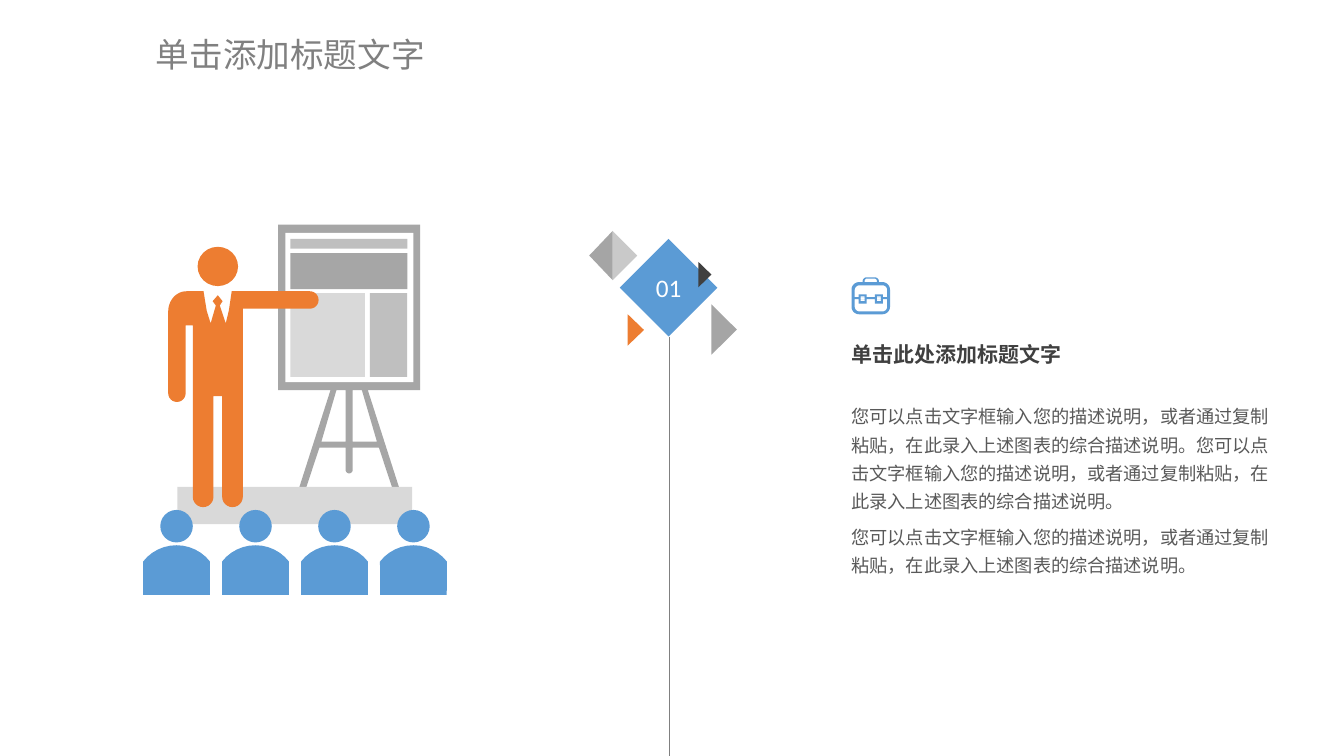
import dataclasses
import math
import typing

import lxml.etree
import pptx
import pptx.dml.color
import pptx.enum.shapes
import pptx.enum.text
import pptx.oxml.ns
import pptx.slide
import pptx.text.text
import pptx.util

Cm = pptx.util.Cm
Pt = pptx.util.Pt
PRESET = pptx.enum.shapes.MSO_SHAPE
Point = tuple[float, float]
Contour = list[Point]


@dataclasses.dataclass(frozen=True)
class Theme:
    blue: str = "5B9BD5"
    orange: str = "ED7D31"
    white: str = "FFFFFF"
    ink: str = "404040"
    body: str = "595959"
    title: str = "808080"
    steel: str = "A6A6A6"
    facet: str = "A5A5A5"
    facet_light: str = "C9C9C9"
    silver: str = "BFBFBF"
    pale: str = "D9D9D9"
    latin: str = "Calibri"
    cjk: str = "Noto Sans CJK SC"
    title_size: int = 24
    number_size: int = 18
    heading_size: int = 15
    body_size: int = 13


THEME = Theme()


class Block(typing.NamedTuple):
    preset: PRESET
    left: float
    top: float
    width: float
    height: float
    color: str


class Triangle(typing.NamedTuple):
    """A vertical edge with its apex to the right, or to the left if reach is negative."""
    left: float
    top: float
    reach: float
    height: float
    color: str


class Passage(typing.NamedTuple):
    text: str
    font: str
    size: int
    color: str
    bold: bool = False
    layout: dict[str, typing.Any] = {}


BOARD = [
    Block(PRESET.RECTANGLE, 7.19, 5.87, 3.23, 3.76, THEME.white),
    Block(PRESET.RECTANGLE, 7.32, 6.02, 2.95, 0.25, THEME.silver),
    Block(PRESET.RECTANGLE, 7.32, 6.38, 2.95, 0.91, THEME.steel),
    Block(PRESET.RECTANGLE, 7.32, 7.39, 1.88, 2.11, THEME.pale),
    Block(PRESET.RECTANGLE, 9.32, 7.39, 0.94, 2.11, THEME.silver),
]
PLATFORM = Block(PRESET.RECTANGLE, 4.47, 12.27, 5.92, 0.94, THEME.pale)
PRESENTER_HEAD = Block(PRESET.OVAL, 4.98, 6.22, 1.02, 0.99, THEME.orange)
NUMBER_DIAMOND = Block(PRESET.DIAMOND, 15.62, 6.02, 2.46, 2.46, THEME.blue)
TRIANGLES = [
    Triangle(15.82, 7.92, 0.41, 0.79, THEME.orange),
    Triangle(17.6, 6.6, 0.33, 0.64, THEME.ink),
    Triangle(15.44, 5.82, 0.62, 1.24, THEME.facet_light),
    Triangle(17.93, 7.67, 0.64, 1.27, THEME.facet),
    Triangle(15.44, 5.82, -0.59, 1.24, THEME.facet),
]

BODY_LAYOUT = {"line_spacing": 1.3, "space_after": Pt(5)}
TITLE = Passage("单击添加标题文字", THEME.cjk, THEME.title_size, THEME.title)
NUMBER = Passage("01", THEME.latin, THEME.number_size, THEME.white,
                 layout={"alignment": pptx.enum.text.PP_ALIGN.CENTER})
DESCRIPTION = [
    Passage("单击此处添加标题文字", THEME.latin, THEME.heading_size, THEME.ink, True,
            {"line_spacing": 1.2, "space_before": Pt(4), "space_after": Pt(23)}),
    Passage("您可以点击文字框输入您的描述说明，或者通过复制粘贴，在此录入上述图表的综合描述说明。"
            "您可以点击文字框输入您的描述说明，或者通过复制粘贴，在此录入上述图表的综合描述说明。",
            THEME.cjk, THEME.body_size, THEME.body, layout=BODY_LAYOUT),
    Passage("您可以点击文字框输入您的描述说明，或者通过复制粘贴，在此录入上述图表的综合描述说明。",
            THEME.cjk, THEME.body_size, THEME.body, layout=BODY_LAYOUT),
]
NO_MARGINS = dict.fromkeys(("margin_left", "margin_top", "margin_right", "margin_bottom"), 0)


def rgb(color: str) -> pptx.dml.color.RGBColor:
    return pptx.dml.color.RGBColor.from_string(color)


def arc(x: float, y: float, rx: float, ry: float, start: int, end: int) -> Contour:
    """Points around centre (x, y); degrees run clockwise from the right."""
    steps = 12
    angles = [math.radians(start + (end - start) * i / steps) for i in range(steps + 1)]
    return [(x + rx * math.cos(a), y + ry * math.sin(a)) for a in angles]


def box(left: float, top: float, right: float, bottom: float,
        top_radius: float = 0, bottom_radius: float = 0) -> Contour:
    """A rectangle, with separately rounded top and bottom corners."""
    corners = [(left, top, 1, 1, top_radius), (right, top, -1, 1, top_radius),
               (right, bottom, -1, -1, bottom_radius), (left, bottom, 1, -1, bottom_radius)]
    points: Contour = []
    for turn, (x, y, dx, dy, r) in enumerate(corners):
        start = 180 + 90 * turn
        points += arc(x + dx * r, y + dy * r, r, r, start, start + 90) if r else [(x, y)]
    return points


def paint(shape: typing.Any, color: str) -> None:
    shape.shadow.inherit = False
    shape.fill.solid()
    shape.fill.fore_color.rgb = rgb(color)
    shape.line.fill.background()


def draw_block(slide: pptx.slide.Slide, block: Block) -> typing.Any:
    shape = slide.shapes.add_shape(block.preset, *map(Cm, block[1:5]))
    paint(shape, block.color)
    return shape


def draw_outline(slide: pptx.slide.Slide, color: str, *contours: Contour) -> None:
    """Draw closed contours as one shape; a contour inside another cuts a hole."""
    first, *others = [[(Cm(x), Cm(y)) for x, y in contour] for contour in contours]
    builder = slide.shapes.build_freeform(*first[0])
    builder.add_line_segments(first[1:], close=True)
    for contour in others:
        builder.move_to(*contour[0])
        builder.add_line_segments(contour[1:], close=True)
    paint(builder.convert_to_shape(), color)


def write(frame: pptx.text.text.TextFrame, passages: list[Passage],
          frame_format: dict[str, typing.Any]) -> None:
    for key, value in frame_format.items():
        setattr(frame, key, value)
    for index, passage in enumerate(passages):
        paragraph = frame.add_paragraph() if index else frame.paragraphs[0]
        for key, value in passage.layout.items():
            setattr(paragraph, key, value)
        run = paragraph.add_run()
        run.text = passage.text
        font_format = {"name": passage.font, "size": Pt(passage.size), "bold": passage.bold}
        for key, value in font_format.items():
            setattr(run.font, key, value)
        run.font.color.rgb = rgb(passage.color)
        east_asian = lxml.etree.SubElement(run._r.get_or_add_rPr(), pptx.oxml.ns.qn("a:ea"))
        east_asian.set("typeface", THEME.cjk)


def draw_easel(slide: pptx.slide.Slide) -> None:
    def mirror(points: Contour) -> Contour:
        return [(2 * 8.8 - x, y) for x, y in reversed(points)]

    left_side = [(7.01, 5.66), (7.01, 9.83), (8.33, 9.83), (7.54, 12.29), (7.6, 12.4),
                 (7.7, 12.34), (8.05, 11.28), (8.71, 11.28)]
    post_end = arc(8.8, 11.84, 0.09, 0.09, 180, 0)
    left_gap = [(8.1, 11.13), (8.48, 9.83), (8.71, 9.83), (8.71, 11.13)]
    draw_outline(slide, THEME.steel, left_side + post_end + mirror(left_side),
                 left_gap, mirror(left_gap))
    for block in BOARD:
        draw_block(slide, block)


def draw_presenter(slide: pptx.slide.Slide) -> None:
    draw_block(slide, PRESENTER_HEAD)
    collar = [(5.84, 7.34), (5.77, 7.82), (5.69, 8.15), (5.54, 7.7), (5.61, 7.59), (5.49, 7.44),
              (5.36, 7.59), (5.44, 7.7), (5.31, 8.15), (5.21, 7.83), (5.13, 7.34)]
    shoulder = arc(4.7, 7.85, 0.46, 0.51, 270, 180)
    hand = arc(4.46, 9.91, 0.22, 0.22, 180, 0)
    left_foot = arc(5.12, 12.52, 0.26, 0.26, 180, 0)
    right_foot = arc(5.86, 12.52, 0.26, 0.26, 180, 0)
    pointing_hand = arc(7.81, 7.56, 0.22, 0.22, 90, -90)
    draw_outline(slide, THEME.orange,
                 collar + shoulder + hand + [(4.68, 8.2), (4.86, 8.2)] + left_foot
                 + [(5.38, 9.98), (5.6, 9.98)] + right_foot + [(6.12, 7.78)] + pointing_hand)


def draw_audience(slide: pptx.slide.Slide) -> None:
    for seat in range(4):
        center = 4.45 + 1.99 * seat
        draw_block(slide, Block(PRESET.OVAL, center - 0.41, 12.85, 0.82, 0.82, THEME.blue))
        shoulders = arc(center, 14.81, 1.07, 1.07, 218, 322)
        draw_outline(slide, THEME.blue,
                     shoulders + [(center + 0.84, 14.99), (center - 0.84, 14.99)])


def draw_briefcase(slide: pptx.slide.Slide) -> None:
    clasps = [contour for x in (21.64, 22.05) for contour in (
        box(x, 7.42, x + 0.2, 7.49), box(x, 7.54, x + 0.2, 7.65),
        box(x + 0.05, 7.47, x + 0.15, 7.59))]
    draw_outline(slide, THEME.blue,
                 box(21.46, 7.11, 22.43, 7.92, 0.19, 0.19),
                 box(21.74, 6.99, 22.15, 7.11, 0.1), box(21.79, 7.02, 22.1, 7.11, 0.06),
                 box(21.54, 7.19, 22.36, 7.49, 0.12), box(21.54, 7.54, 22.36, 7.85, 0, 0.12),
                 *clasps)


def draw_timeline(slide: pptx.slide.Slide) -> None:
    line = slide.shapes.add_connector(pptx.enum.shapes.MSO_CONNECTOR.STRAIGHT,
                                      Cm(16.86), Cm(8.48), Cm(16.86), Cm(19.05))
    line.line.color.rgb = rgb(THEME.title)
    line.line.width = Pt(0.5)
    lxml.etree.SubElement(line._element.spPr, pptx.oxml.ns.qn("a:effectLst"))
    diamond = draw_block(slide, NUMBER_DIAMOND)
    write(diamond.text_frame, [NUMBER],
          {**NO_MARGINS, "vertical_anchor": pptx.enum.text.MSO_ANCHOR.MIDDLE})
    for left, top, reach, height, color in TRIANGLES:
        draw_outline(slide, color,
                     [(left, top), (left + reach, top + height / 2), (left, top + height)])


def main() -> None:
    deck = pptx.Presentation()
    deck.slide_width, deck.slide_height = Cm(33.87), Cm(19.05)
    slide = deck.slides.add_slide(deck.slide_layouts[6])
    grow = {"auto_size": pptx.enum.text.MSO_AUTO_SIZE.SHAPE_TO_FIT_TEXT}
    title = slide.shapes.add_textbox(Cm(3.68), Cm(0.74), Cm(7.34), Cm(1.27))
    write(title.text_frame, [TITLE], {**grow, "word_wrap": False})
    draw_easel(slide)
    draw_block(slide, PLATFORM)
    draw_presenter(slide)
    draw_audience(slide)
    description = slide.shapes.add_textbox(Cm(21.46), Cm(8.48), Cm(10.92), Cm(6.88))
    write(description.text_frame, DESCRIPTION, {**grow, **NO_MARGINS, "word_wrap": True})
    draw_timeline(slide)
    draw_briefcase(slide)
    deck.save("out.pptx")


if __name__ == "__main__":
    main()
